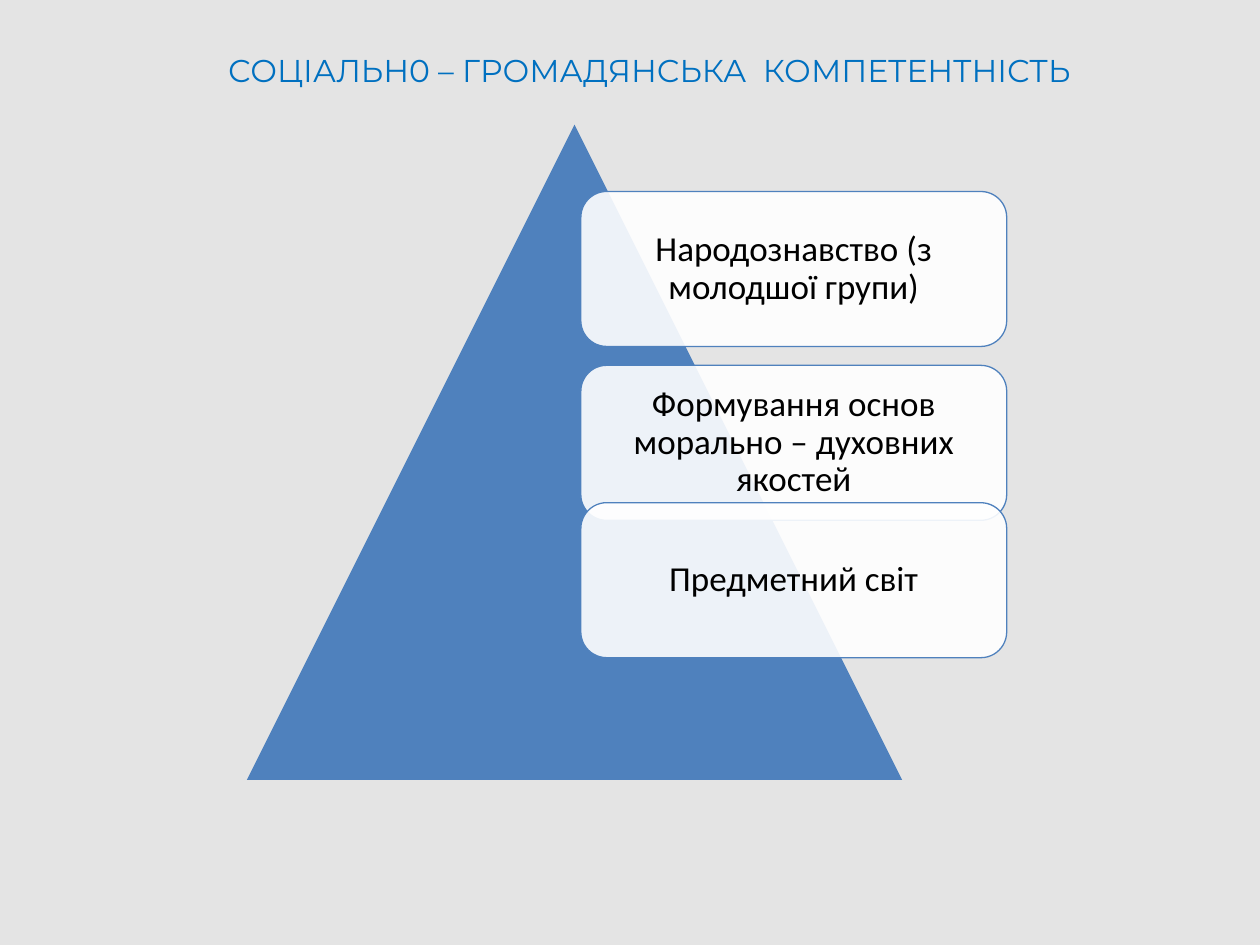
from dataclasses import dataclass

from lxml import etree
from pptx import Presentation
from pptx.dml.color import RGBColor
from pptx.enum.shapes import MSO_SHAPE
from pptx.enum.text import MSO_ANCHOR, PP_ALIGN
from pptx.oxml.ns import qn
from pptx.util import Inches, Pt

TRIANGLE = MSO_SHAPE.ISOSCELES_TRIANGLE
ROUNDED = MSO_SHAPE.ROUNDED_RECTANGLE
CENTER = PP_ALIGN.CENTER
TOP, MIDDLE = MSO_ANCHOR.TOP, MSO_ANCHOR.MIDDLE


@dataclass(frozen=True)
class Theme:
    back: RGBColor = RGBColor(0xE4, 0xE4, 0xE4)
    blue: RGBColor = RGBColor(0x4F, 0x81, 0xBD)
    head: RGBColor = RGBColor(0x00, 0x70, 0xC0)
    card: RGBColor = RGBColor(0xFF, 0xFF, 0xFF)
    ink: RGBColor = RGBColor(0x00, 0x00, 0x00)
    head_size: int = 18
    card_size: int = 20


theme = Theme()


def write(shape, text, *, font, size, color, anchor=TOP, inset=None, spacing=None):
    frame = shape.text_frame
    frame.word_wrap = True
    frame.vertical_anchor = anchor
    if inset is not None:
        frame.margin_left = frame.margin_right = Inches(inset)
        frame.margin_top = frame.margin_bottom = Inches(inset)
    para = frame.paragraphs[0]
    para.alignment = CENTER
    if spacing:
        para.line_spacing = spacing
    run = para.add_run()
    run.text = text
    run.font.name = font
    run.font.size = Pt(size)
    run.font.color.rgb = color


deck = Presentation()
deck.slide_width, deck.slide_height = Inches(10), Inches(7.5)
slide = deck.slides.add_slide(deck.slide_layouts[6])
slide.background.fill.solid()
slide.background.fill.fore_color.rgb = theme.back

# Title
title = slide.shapes.add_textbox(Inches(1.14), Inches(0.36), Inches(8.03), Inches(0.4))
write(title, "СОЦІАЛЬН0 – ГРОМАДЯНСЬКА  КОМПЕТЕНТНІСТЬ",
      font="Montserrat", size=theme.head_size, color=theme.head)

# Pyramid
pyramid = slide.shapes.add_shape(TRIANGLE, Inches(1.96), Inches(0.99), Inches(5.2), Inches(5.2))
pyramid.shadow.inherit = False
pyramid.fill.solid()
pyramid.fill.fore_color.rgb = theme.blue
pyramid.line.fill.background()

# Cards, the last one overlapping the second
cards = [
    (1.52, "Народознавство (з молодшої групи)"),
    (2.9, "Формування основ морально – духовних якостей"),
    (3.99, "Предметний світ"),
]
for top, text in cards:
    card = slide.shapes.add_shape(ROUNDED, Inches(4.61), Inches(top), Inches(3.38), Inches(1.23))
    card.shadow.inherit = False
    card.fill.solid()
    card.fill.fore_color.rgb = theme.card
    tint = card.fill._xPr.find(qn("a:solidFill"))[0]
    etree.SubElement(tint, qn("a:alpha"), val="90000")
    card.line.color.rgb = theme.blue
    card.line.width = Pt(0.75)
    write(card, text, font="Calibri", size=theme.card_size, color=theme.ink,
          anchor=MIDDLE, inset=0.02, spacing=0.9)

deck.save("out.pptx")
